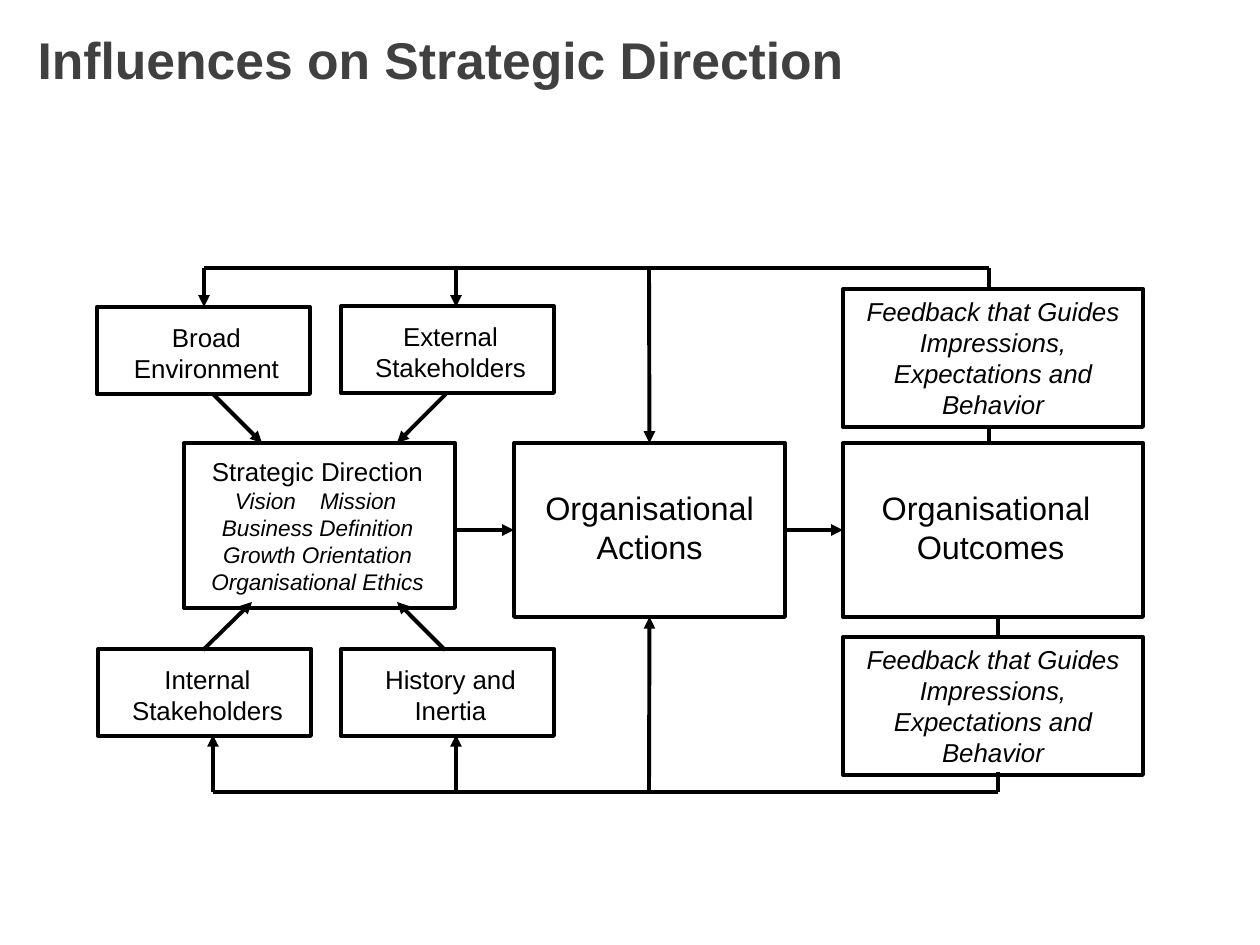
"""Build the slide showing what influences strategic direction."""
from lxml import etree
from pptx import Presentation
from pptx.dml.color import RGBColor
from pptx.enum.shapes import MSO_CONNECTOR, MSO_SHAPE
from pptx.enum.text import MSO_ANCHOR, MSO_AUTO_SIZE, PP_ALIGN
from pptx.oxml.ns import qn
from pptx.util import Emu, Pt

RECT = MSO_SHAPE.RECTANGLE
STRAIGHT = MSO_CONNECTOR.STRAIGHT
MIDDLE = MSO_ANCHOR.MIDDLE
LEFT, CENTER = PP_ALIGN.LEFT, PP_ALIGN.CENTER
TOP_SIDE, LEFT_SIDE, BOTTOM_SIDE, RIGHT_SIDE = range(4)

COLORS = {"title": "404040", "ink": "000000"}
FONT = "Arial"
SMALL, LIST, LARGE = 14.8, 12.9, 18.5
EMU_PER_PX = 914400 / 126
LINE_WIDTH = Pt(2.25)

TITLE = "Influences on Strategic Direction"
TITLE_FRAME = (25, 26, 1071, 73)
LIST_TABS = (51, 136)
FEEDBACK = [("Feedback that Guides Impressions, Expectations and Behavior", SMALL, True)]

# name: (frame, insets left/top/right/bottom, paragraphs of text/size/italic)
BOXES = {
    "broad": ((97, 307, 213, 87), (6, 4, 0, 0),
              [("Broad", SMALL, False), ("Environment", SMALL, False)]),
    "external": ((341, 306, 213, 87), (6, 4, 0, 0),
                 [("External", SMALL, False), ("Stakeholders", SMALL, False)]),
    "internal": ((98, 649, 213, 87), (6, 4, 0, 0),
                 [("Internal", SMALL, False), ("Stakeholders", SMALL, False)]),
    "history": ((341, 649, 213, 87), (6, 4, 0, 0),
                [("History and", SMALL, False), ("Inertia", SMALL, False)]),
    "direction": ((184, 443, 271, 165), (0, 0, 4, 0),
                  [("Strategic Direction", SMALL, False),
                   ("\tVision\tMission", LIST, True),
                   ("Business Definition", LIST, True),
                   ("Growth Orientation", LIST, True),
                   ("Organisational Ethics", LIST, True)]),
    "actions": ((514, 443, 271, 174), (0, 0, 0, 5),
                [("Organisational", LARGE, False), ("Actions", LARGE, False)]),
    "outcomes": ((843, 443, 300, 174), (0, 0, 14, 5),
                 [("Organisational", LARGE, False), (" Outcomes", LARGE, False)]),
    "feedback_top": ((843, 289, 300, 138), (12, 6, 12, 6), FEEDBACK),
    "feedback_bottom": ((843, 637, 300, 138), (12, 6, 12, 6), FEEDBACK),
}

TOP_BUS, BOTTOM_BUS = 268, 792
ARROWS = [
    (203, 650, 252, 602), (445, 650, 397, 602),
    (213, 394, 262, 443), (446, 394, 397, 443),
    (213, BOTTOM_BUS, 213, 735), (456, BOTTOM_BUS, 456, 735),
    (204, TOP_BUS, 204, 307), (456, TOP_BUS, 456, 307),
]
LINES = [
    (998, BOTTOM_BUS, 213, BOTTOM_BUS), (989, TOP_BUS, 204, TOP_BUS),
    (989, TOP_BUS, 989, 289), (989, 425, 989, 443),
    (998, BOTTOM_BUS, 998, 772), (998, 617, 998, 637),
]
JOINED_ARROWS = [
    ((456, 530, 514, 530), None, ("actions", LEFT_SIDE)),
    ((785, 530, 843, 530), ("actions", RIGHT_SIDE), ("outcomes", LEFT_SIDE)),
    ((649, TOP_BUS, 649, 443), None, ("actions", TOP_SIDE)),
    ((649, BOTTOM_BUS, 649, 617), None, ("actions", BOTTOM_SIDE)),
]


def px(n):
    return Emu(round(n * EMU_PER_PX))


def color(name):
    return RGBColor.from_string(COLORS[name])


def set_font(p, size, name, bold=False, italic=False):
    font = p.font
    font.name, font.size, font.bold, font.italic = FONT, Pt(size), bold, italic
    font.color.rgb = color(name)


def add_tabs(p):
    p.alignment = LEFT
    tabs = etree.SubElement(p._p.get_or_add_pPr(), qn("a:tabLst"))
    for stop in LIST_TABS:
        etree.SubElement(tabs, qn("a:tab"), pos=str(px(stop)), algn="l")


def add_box(s, frame, insets, paragraphs):
    sp = s.shapes.add_shape(RECT, *map(px, frame))
    sp.shadow.inherit = False
    sp.fill.background()
    sp.line.color.rgb = color("ink")
    sp.line.width = LINE_WIDTH
    tf = sp.text_frame
    tf.word_wrap = True
    tf.vertical_anchor = MIDDLE
    tf.margin_left, tf.margin_top, tf.margin_right, tf.margin_bottom = map(px, insets)
    for i, (text, size, italic) in enumerate(paragraphs):
        p = tf.add_paragraph() if i else tf.paragraphs[0]
        p.text = text
        p.alignment = CENTER
        if "\t" in text:
            add_tabs(p)
        set_font(p, size, "ink", italic=italic)
    return sp


def add_line(s, ends, arrow=False):
    line = s.shapes.add_connector(STRAIGHT, *map(px, ends))
    line.line.color.rgb = color("ink")
    line.line.width = LINE_WIDTH
    if arrow:
        etree.SubElement(line.line._get_or_add_ln(), qn("a:tailEnd"), type="triangle")
    etree.SubElement(line._element.spPr, qn("a:effectLst"))
    return line


def add_title(s):
    title = s.shapes.title
    title.left, title.top, title.width, title.height = map(px, TITLE_FRAME)
    tf = title.text_frame
    tf.text = TITLE
    tf.word_wrap = True
    tf.auto_size = MSO_AUTO_SIZE.NONE
    tf.vertical_anchor = MIDDLE
    p = tf.paragraphs[0]
    p.alignment = LEFT
    p.line_spacing = 0.9
    set_font(p, 29.5, "title", bold=True)


def main():
    prs = Presentation()
    prs.slide_width, prs.slide_height = px(1260), px(945)
    s = prs.slides.add_slide(prs.slide_layouts[0])
    subtitle = s.placeholders[1]._element
    subtitle.getparent().remove(subtitle)
    add_title(s)
    boxes = {name: add_box(s, *box) for name, box in BOXES.items()}
    for ends in ARROWS:
        add_line(s, ends, arrow=True)
    for ends in LINES:
        add_line(s, ends)
    for ends, start, end in JOINED_ARROWS:
        line = add_line(s, ends, arrow=True)
        if start:
            line.begin_connect(boxes[start[0]], start[1])
        line.end_connect(boxes[end[0]], end[1])
    prs.save("out.pptx")


if __name__ == "__main__":
    main()
